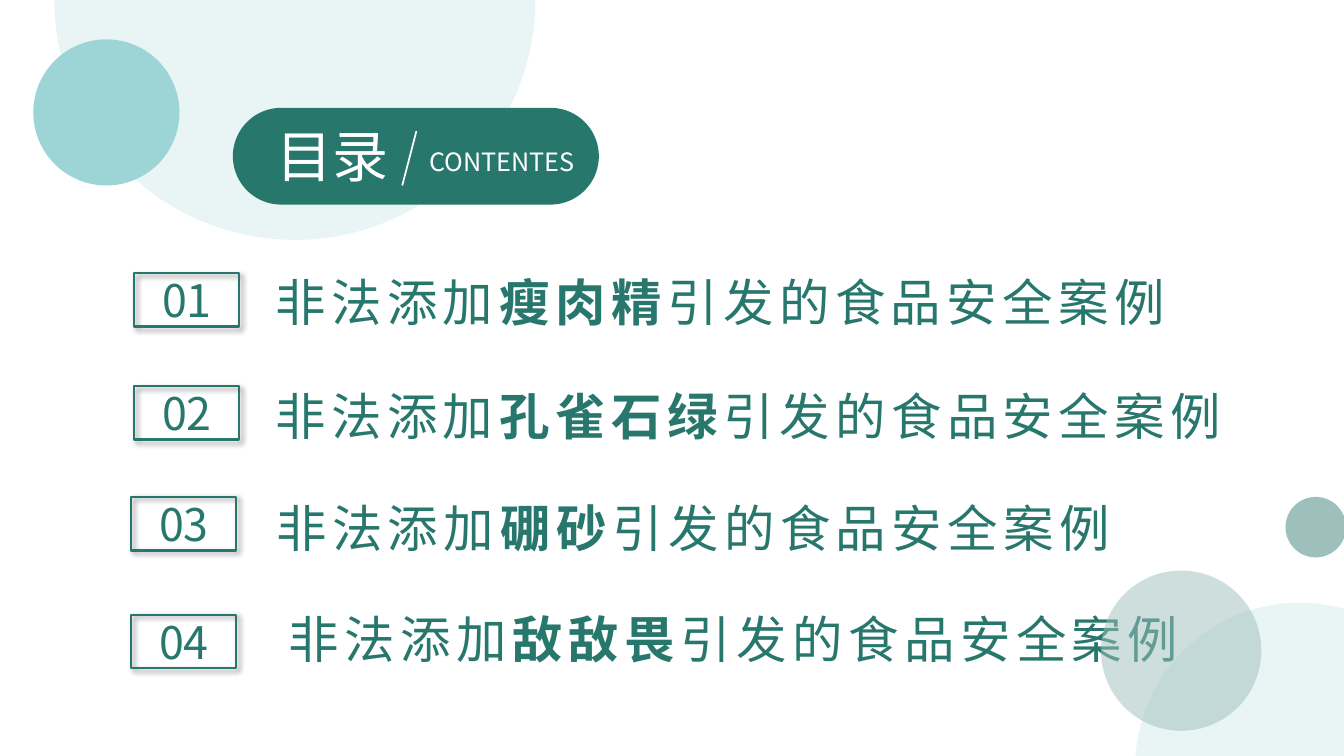
"""Builds the contents slide of a food safety presentation."""
from lxml.etree import SubElement
from pptx import Presentation
from pptx.dml.color import RGBColor
from pptx.enum.shapes import MSO_CONNECTOR as Connector, MSO_SHAPE as Shape
from pptx.enum.text import PP_ALIGN as Align
from pptx.oxml.ns import qn
from pptx.util import Pt

PX = 9144
FONT = "Noto Sans CJK SC"
WHITE = RGBColor(0xFF, 0xFF, 0xFF)
GREEN = RGBColor(0x27, 0x77, 0x6D)
MIST = RGBColor(0xE9, 0xF5, 0xF5)
AQUA = RGBColor(0x9D, 0xD5, 0xD6)
SAGE = RGBColor(0x9D, 0xC0, 0xBC)

TITLE, SUBTITLE = "目录", "CONTENTES"
PREFIX, SUFFIX = "非法添加", "引发的食品安全案例"
TOPICS = [
    ("瘦肉精", (133, 271), (263, 264, 935)),
    ("孔雀石绿", (133, 383), (263, 377, 982)),
    ("硼砂", (130, 493), (264, 488, 920)),
    ("敌敌畏", (130, 610), (276, 598, 922)),
]
BACK_CIRCLES = [(54, -239, 477, MIST, 100), (33, 39, 145, AQUA, 100)]
FRONT_CIRCLES = [
    (1126, 598, 326, MIST, 100),
    (1275, 493, 60, SAGE, 100),
    (1092, 566, 159, SAGE, 51),
]


def scaled(*lengths):
    return [length * PX for length in lengths]


def add_filled(slide, kind, box, color):
    shape = slide.shapes.add_shape(kind, *scaled(*box))
    shape.shadow.inherit = False
    shape.fill.solid()
    shape.fill.fore_color.rgb = color
    shape.line.fill.background()
    return shape


def add_circles(slide, circles):
    for left, top, size, color, opacity in circles:
        circle = add_filled(slide, Shape.OVAL, (left, top, size, size), color)
        if opacity < 100:
            color_node = circle.fill._xPr.find(".//" + qn("a:srgbClr"))
            SubElement(color_node, qn("a:alpha"), val=str(opacity * 1000))


def add_text(slide, box, pieces, size, color, align=Align.LEFT, spacing=0):
    frame = slide.shapes.add_textbox(*scaled(*box)).text_frame
    frame.word_wrap = True
    paragraph = frame.paragraphs[0]
    paragraph.alignment = align
    for text, bold in pieces:
        run = paragraph.add_run()
        run.text = text
        font = run.font
        font.name, font.size, font.bold = FONT, Pt(size), bold
        font.color.rgb = color
        properties = font._element
        SubElement(properties, qn("a:ea"), typeface=FONT)
        if spacing:
            properties.set("spc", str(spacing * 100))


def add_slash(slide):
    slash = slide.shapes.add_connector(Connector.STRAIGHT, *scaled(399, 184, 413, 130))
    slash.line.color.rgb = WHITE
    slash.line.width = Pt(1.25)
    SubElement(slash._element.spPr, qn("a:effectLst"))


def add_badge(slide, left, top, number):
    badge = slide.shapes.add_shape(Shape.RECTANGLE, *scaled(left, top, 104, 53))
    badge.shadow.inherit = False
    badge.fill.background()
    badge.line.color.rgb = GREEN
    badge.line.width = Pt(1.75)
    effects = badge._element.spPr.find(qn("a:effectLst"))
    shadow = SubElement(effects, qn("a:outerShdw"), blurRad=str(Pt(4)), dist=str(Pt(3)),
                        dir=str(45 * 60000), algn="tl", rotWithShape="0")
    shade = SubElement(shadow, qn("a:srgbClr"), val="000000")
    SubElement(shade, qn("a:alpha"), val="40000")
    add_text(slide, (left + 3, top - 5, 99, 64), [(f"{number:02}", False)], 32, GREEN, Align.CENTER)


def main():
    presentation = Presentation()
    presentation.slide_width, presentation.slide_height = scaled(1333, 750)
    slide = presentation.slides.add_slide(presentation.slide_layouts[6])

    add_circles(slide, BACK_CIRCLES)
    pill = add_filled(slide, Shape.ROUNDED_RECTANGLE, (231, 107, 363, 96), GREEN)
    pill.adjustments[0] = 0.5
    add_text(slide, (264, 116, 135, 77), [(TITLE, False)], 40, WHITE)
    add_slash(slide)
    add_text(slide, (416, 140, 178, 40), [(SUBTITLE, False)], 18, WHITE)

    for number, (topic, badge, (left, top, width)) in enumerate(TOPICS, 1):
        add_badge(slide, *badge, number)
        pieces = [(PREFIX, False), (topic, True), (SUFFIX, False)]
        add_text(slide, (left, top, width, 71), pieces, 36, GREEN, spacing=4)

    add_circles(slide, FRONT_CIRCLES)
    presentation.save("out.pptx")


if __name__ == "__main__":
    main()
